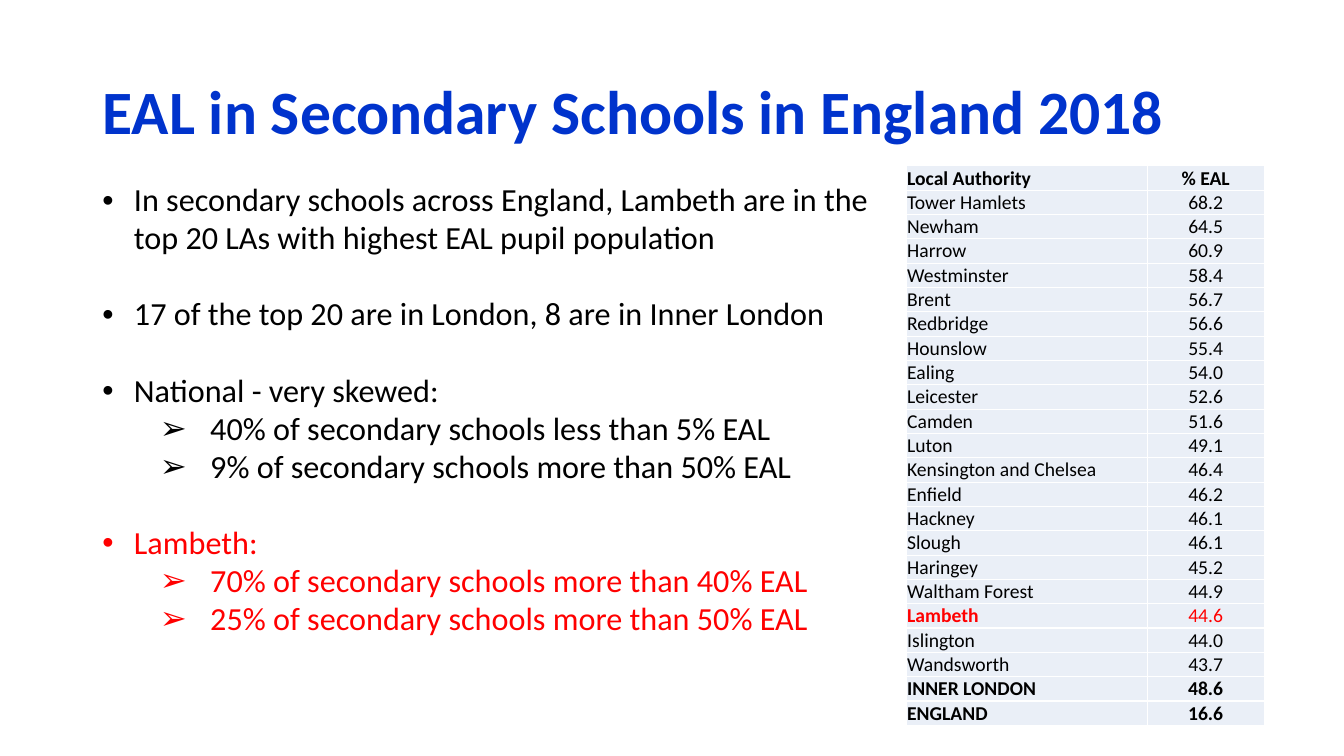
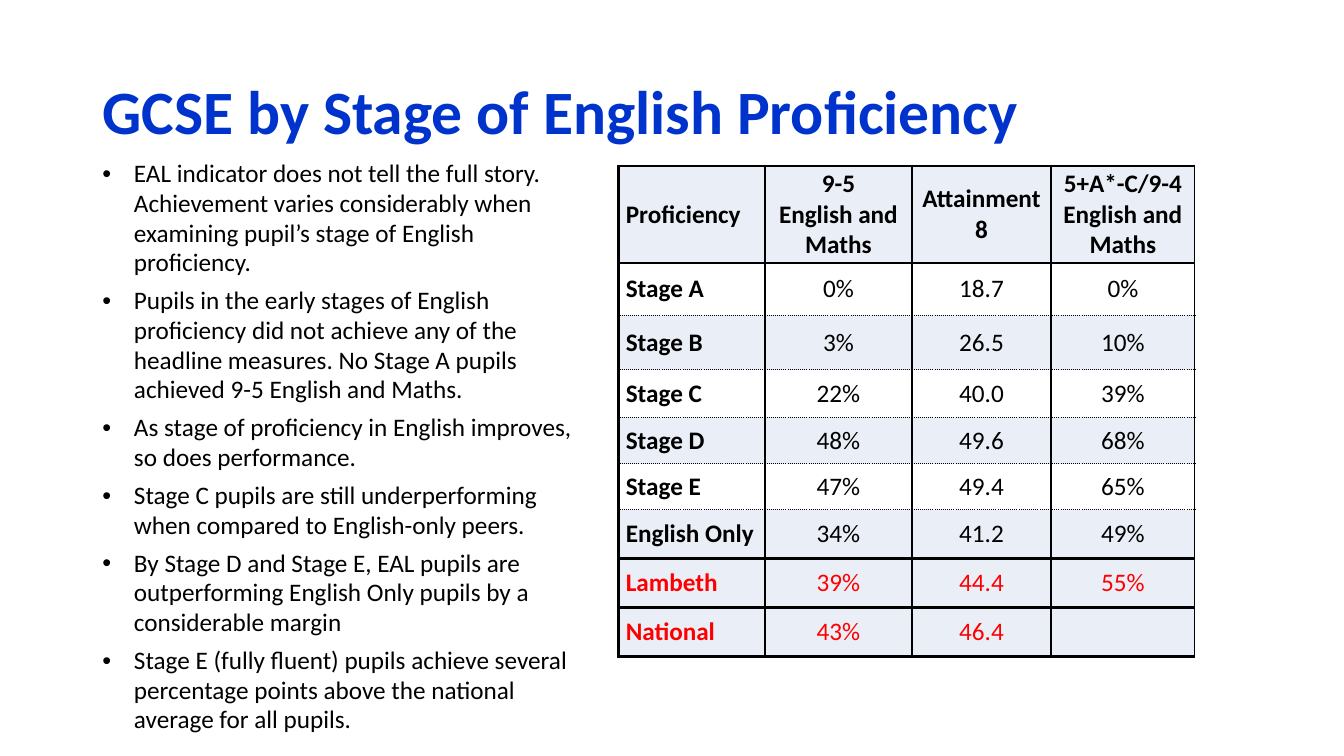
from lxml.etree import SubElement
from pptx import Presentation
from pptx.dml.color import RGBColor
from pptx.enum.text import MSO_ANCHOR as Anchor, MSO_AUTO_SIZE as AutoSize, PP_ALIGN as Align
from pptx.oxml.ns import qn
from pptx.util import Pt

BLUE = RGBColor(0x00, 0x33, 0xCC)
BLACK = RGBColor(0x00, 0x00, 0x00)
RED = RGBColor(0xFF, 0x00, 0x00)
WHITE = RGBColor(0xFF, 0xFF, 0xFF)
PALE = RGBColor(0xEA, 0xEF, 0xF7)
FONT = "Calibri"
LEFT = 66
BULLETS = [("•", 22.5, -22.5), ("➢", 77, -36)]

AUTHORITIES = [
    ("Local Authority", "% EAL"), ("Tower Hamlets", "68.2"), ("Newham", "64.5"),
    ("Harrow", "60.9"), ("Westminster", "58.4"), ("Brent", "56.7"),
    ("Redbridge", "56.6"), ("Hounslow", "55.4"), ("Ealing", "54.0"),
    ("Leicester", "52.6"), ("Camden", "51.6"), ("Luton", "49.1"),
    ("Kensington and Chelsea", "46.4"), ("Enfield", "46.2"), ("Hackney", "46.1"),
    ("Slough", "46.1"), ("Haringey", "45.2"), ("Waltham Forest", "44.9"),
    ("Lambeth", "44.6"), ("Islington", "44.0"), ("Wandsworth", "43.7"),
    ("INNER LONDON", "48.6"), ("ENGLAND", "16.6"),
]
SCHOOL_POINTS = [
    ("In secondary schools across England, Lambeth are in the top 20 LAs "
     "with highest EAL pupil population", 0, BLACK),
    ("17 of the top 20 are in London, 8 are in Inner London", 0, BLACK),
    ("National - very skewed:", 0, BLACK),
    ("40% of secondary schools less than 5% EAL", 1, BLACK),
    ("9% of secondary schools more than 50% EAL", 1, BLACK),
    ("Lambeth:", 0, RED),
    ("70% of secondary schools more than 40% EAL", 1, RED),
    ("25% of secondary schools more than 50% EAL", 1, RED),
]
STAGES = [
    ("Proficiency", "9-5\nEnglish and Maths", "Attainment 8", "5+A*-C/9-4 English and Maths"),
    ("Stage A", "0%", "18.7", "0%"),
    ("Stage B", "3%", "26.5", "10%"),
    ("Stage C", "22%", "40.0", "39%"),
    ("Stage D", "48%", "49.6", "68%"),
    ("Stage E", "47%", "49.4", "65%"),
    ("English Only", "34%", "41.2", "49%"),
    ("Lambeth", "39%", "44.4", "55%"),
    ("National", "43%", "46.4", ""),
]
STAGE_POINTS = [
    "EAL indicator does not tell the full story. Achievement varies considerably "
    "when examining pupil’s stage of English proficiency.",
    "Pupils in the early stages of English proficiency did not achieve any of the "
    "headline measures. No Stage A pupils achieved 9-5 English and Maths.",
    "As stage of proficiency in English improves, so does performance.",
    "Stage C pupils are still underperforming when compared to English-only peers.",
    "By Stage D and Stage E, EAL pupils are outperforming English Only pupils by a "
    "considerable margin",
    "Stage E (fully fluent) pupils achieve several percentage points above the "
    "national average for all pupils.",
]


class Deck:
    def __init__(self):
        self.deck = Presentation()
        self.deck.slide_width, self.deck.slide_height = Pt(960), Pt(540)
        self.page = None

    def place(self, shape, left, top, width, height):
        shape.left, shape.top = Pt(left), Pt(top)
        shape.width, shape.height = Pt(width), Pt(height)

    def style(self, para, size, color=BLACK, bold=False):
        for span in para.runs:
            font = span.font
            font.name, font.size, font.bold = FONT, Pt(size), bold
            font.color.rgb = color

    def add_page(self, title):
        self.page = self.deck.slides.add_slide(self.deck.slide_layouts[1])
        box = self.page.shapes.title
        self.place(box, LEFT, 29, 828, 105)
        frame = box.text_frame
        frame.text = title
        frame.auto_size = AutoSize.NONE
        frame.vertical_anchor = Anchor.MIDDLE
        para = frame.paragraphs[0]
        para.alignment, para.line_spacing = Align.LEFT, 0.9
        self.style(para, 44, BLUE, True)

    def add_bullets(self, points, area, size, before=0, after=0):
        box = self.page.placeholders[1]
        self.place(box, *area)
        frame = box.text_frame
        frame.text = "\n".join(text for text, level, color in points)
        frame.auto_size = AutoSize.NONE
        for index, (para, (text, level, color)) in enumerate(zip(frame.paragraphs, points)):
            para.level, para.line_spacing = level, 0.98
            para.space_before = Pt(before if index and level == 0 else 0)
            para.space_after = Pt(after)
            self.style(para, size, color)
            mark, margin, indent = BULLETS[level]
            props = para._p.get_or_add_pPr()
            props.set("marL", str(Pt(margin)))
            props.set("indent", str(Pt(indent)))
            SubElement(props, qn("a:buFont"), typeface="Arial")
            SubElement(props, qn("a:buChar"), char=mark)

    def add_table(self, rows, left, top, widths, heights, cell_style):
        frame = self.page.shapes.add_table(
            len(rows), len(widths), Pt(left), Pt(top), Pt(sum(widths)), Pt(sum(heights)))
        table = frame.table
        table.first_row = table.horz_banding = False
        for column, width in zip(table.columns, widths):
            column.width = Pt(width)
        for row, height in zip(table.rows, heights):
            row.height = Pt(height)
        for r, values in enumerate(rows):
            for c, text in enumerate(values):
                cell_style(self, table.cell(r, c), text, r, c)

    def fill_cell(self, cell, text, column, size, color, bold, fill, anchor, margins, borders):
        cell.text = text
        cell.vertical_anchor = anchor
        side, top = margins
        cell.margin_left = cell.margin_right = Pt(side)
        cell.margin_top, cell.margin_bottom = Pt(top), Pt(0)
        for para in cell.text_frame.paragraphs:
            para.alignment = Align.CENTER if column else Align.LEFT
            self.style(para, size, color, bold)
        props = cell._tc.get_or_add_tcPr()
        for side_name, (line_color, width, dash) in zip("LRTB", borders):
            line = SubElement(props, qn("a:ln" + side_name), w=str(Pt(width)))
            paint = SubElement(line, qn("a:solidFill"))
            SubElement(paint, qn("a:srgbClr"), val=str(line_color))
            SubElement(line, qn("a:prstDash"), val=dash)
        cell.fill.solid()
        cell.fill.fore_color.rgb = fill


def authority_cell(deck, cell, text, row, column):
    lambeth = AUTHORITIES[row][0] == "Lambeth"
    total = row == 0 or row >= len(AUTHORITIES) - 2
    deck.fill_cell(
        cell, text, column, 14, RED if lambeth else BLACK,
        total or (lambeth and column == 0), PALE, Anchor.BOTTOM, (0.5, 0.3),
        [(WHITE, 1, "solid")] * 4)


def stage_cell(deck, cell, text, row, column):
    thick, thin, dotted = (BLACK, 2.25, "solid"), (BLACK, 1, "solid"), (BLACK, 1, "sysDot")
    average = row >= 7
    borders = [
        thin if column else thick,
        thin,
        thick if row in (0, 1, 7, 8) else dotted,
        thick if row in (0, 6, 7, 8) else dotted,
    ]
    deck.fill_cell(
        cell, text, column, 18, RED if average else BLACK, row == 0 or column == 0,
        PALE if average or row % 2 == 0 else WHITE, Anchor.MIDDLE, (5, 0), borders)


def main():
    show = Deck()

    show.add_page("EAL in Secondary Schools in England 2018")
    show.add_bullets(SCHOOL_POINTS, (LEFT, 126, 572, 342), 23, before=27.5)
    show.add_table(AUTHORITIES, 647.5, 118.5, [172, 83.5],
                   [17.4] * len(AUTHORITIES), authority_cell)

    show.add_page("GCSE by Stage of English Proficiency")
    show.add_table(STAGES, 442, 118.5, [104.4, 105, 99.4, 102.6],
                   [69.3, 37.4, 39, 34, 33, 33, 35, 35, 35], stage_cell)
    show.add_bullets([(text, 0, BLACK) for text in STAGE_POINTS],
                     (LEFT, 110, 353.5, 430), 18, after=6)

    show.deck.save("out.pptx")


if __name__ == "__main__":
    main()
